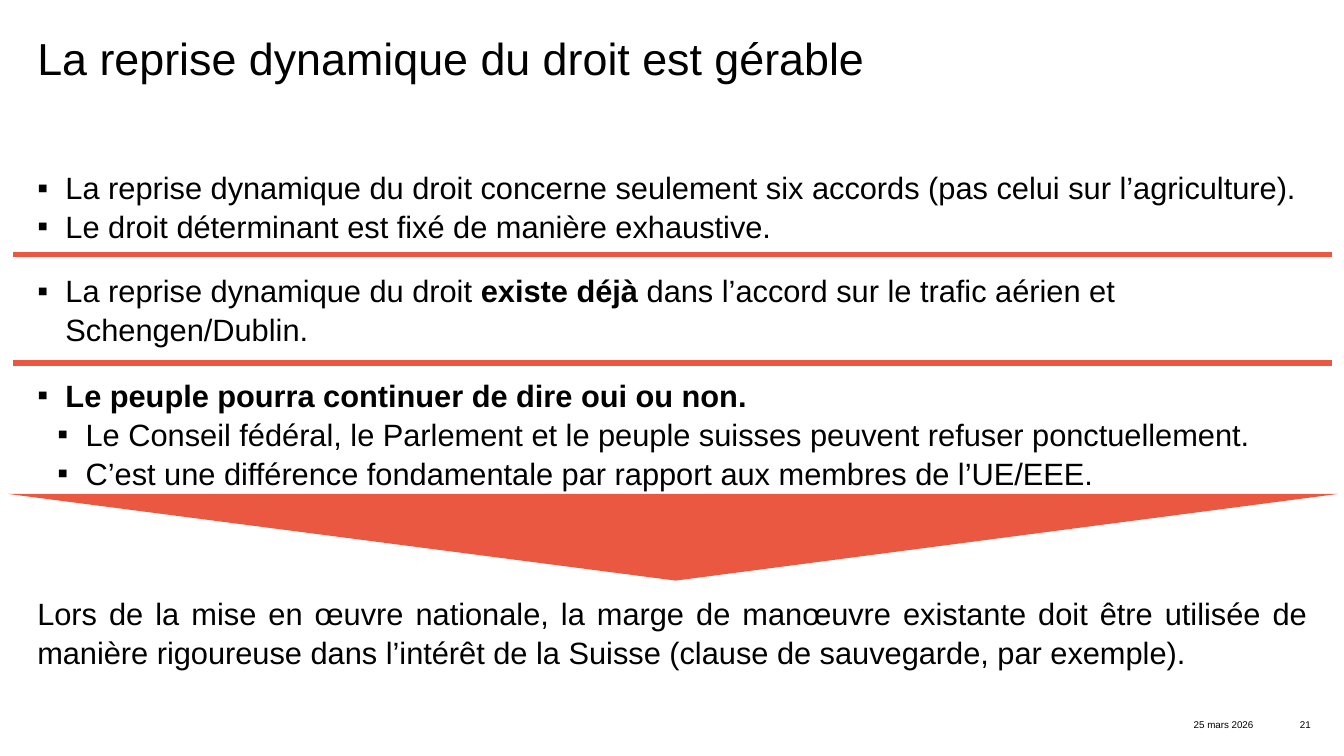
from dataclasses import dataclass

from lxml.etree import SubElement
from pptx import Presentation
from pptx.dml.color import RGBColor
from pptx.enum.shapes import MSO_SHAPE as Shape
from pptx.enum.text import MSO_ANCHOR as Anchor, PP_ALIGN as Align
from pptx.oxml.ns import qn
from pptx.util import Inches, Pt


@dataclass(frozen=True)
class Theme:
    font: str = "Arial"
    ink: RGBColor = RGBColor(0x00, 0x00, 0x00)
    accent: RGBColor = RGBColor(0xEA, 0x58, 0x41)
    title_size: float = 32
    body_size: float = 22
    footer_size: float = 7
    body_spacing: float = 1.05
    hang: float = 0.28
    level_step: float = 0.2


THEME = Theme()
LEFT, WIDTH = 0.37, 12.6

# Each paragraph is a level and its runs; a run is a text and its weight
SCOPE = [
    (0, [("La reprise dynamique du droit concerne seulement six accords "
          "(pas celui sur l’agriculture).", False)]),
    (0, [("Le droit déterminant est fixé de manière exhaustive.", False)]),
]
PRECEDENT = [
    (0, [("La reprise dynamique du droit ", False), ("existe déjà ", True),
         ("dans l’accord sur le trafic aérien et Schengen/Dublin.", False)]),
]
VOTE = [
    (0, [("Le peuple pourra continuer de dire oui ou non.", True)]),
    (1, [("Le Conseil fédéral, le Parlement et le peuple suisses peuvent "
          "refuser ponctuellement.", False)]),
    (1, [("C’est une différence fondamentale par rapport aux membres de "
          "l’UE/EEE.", False)]),
]
CONCLUSION = ("Lors de la mise en œuvre nationale, la marge de manœuvre existante "
              "doit être utilisée de manière rigoureuse dans l’intérêt de la Suisse "
              "(clause de sauvegarde, par exemple).")


def add_bullet(para, level):
    para.level = level
    props = para._p.get_or_add_pPr()
    props.set("marL", str(Inches(THEME.hang + level * THEME.level_step)))
    props.set("indent", str(-Inches(THEME.hang)))
    SubElement(props, qn("a:buFont")).set("typeface", THEME.font)
    SubElement(props, qn("a:buChar")).set("char", "▪")


def add_text(page, box, paragraphs, *, size=THEME.body_size, align=Align.LEFT,
             spacing=THEME.body_spacing, bullets=False):
    """Place text in a box; a plain string counts as one regular paragraph."""
    if isinstance(paragraphs, str):
        paragraphs = [(0, [(paragraphs, False)])]
    frame = page.shapes.add_textbox(*map(Inches, box)).text_frame
    frame.word_wrap = True
    frame.vertical_anchor = Anchor.TOP
    frame.margin_left = frame.margin_right = 0
    frame.margin_top = frame.margin_bottom = 0
    for index, (level, spans) in enumerate(paragraphs):
        para = frame.add_paragraph() if index else frame.paragraphs[0]
        para.alignment = align
        para.line_spacing = spacing
        if bullets:
            add_bullet(para, level)
        for text, bold in spans:
            span = para.add_run()
            span.text = text
            span.font.name = THEME.font
            span.font.size = Pt(size)
            span.font.bold = bold
            span.font.color.rgb = THEME.ink


def add_accent(page, kind, box):
    shape = page.shapes.add_shape(kind, *map(Inches, box))
    shape.shadow.inherit = False
    shape.fill.solid()
    shape.fill.fore_color.rgb = THEME.accent
    shape.line.fill.background()
    return shape


def add_arguments(page, left, width):
    # Dividers between the three groups
    for top in (2.4, 3.48):
        add_accent(page, Shape.MATH_MINUS, (left - 2.6, top, width + 5.2, 0.25))
    # Bulleted groups
    for top, height, group in ((1.66, 0.74, SCOPE), (2.68, 0.74, PRECEDENT),
                               (3.72, 1.11, VOTE)):
        add_text(page, (left, top, width, height), group, bullets=True)


def add_conclusion(page, left, top, width):
    arrow = add_accent(page, Shape.ISOSCELES_TRIANGLE,
                       (left - 0.29, top, width + 0.59, 0.86))
    arrow.rotation = 180
    arrow.adjustments[0] = 0.498
    add_text(page, (left, top + 0.98, width, 0.74), CONCLUSION, align=Align.JUSTIFY)


def add_footer(page, top):
    for text, left, width in (("25 mars 2026", 6.68, 5.75), ("21", 12.76, 0.24)):
        add_text(page, (left, top, width, 0.1), text, size=THEME.footer_size,
                 align=Align.RIGHT, spacing=0.9)


def main():
    deck = Presentation()
    deck.slide_width, deck.slide_height = Inches(13.33), Inches(7.5)
    page = deck.slides.add_slide(deck.slide_layouts[6])
    add_text(page, (LEFT, 0.39, WIDTH, 0.43), "La reprise dynamique du droit est gérable",
             size=THEME.title_size, spacing=0.84)
    add_arguments(page, LEFT, WIDTH)
    add_conclusion(page, LEFT, 4.9, WIDTH)
    add_footer(page, 7.14)
    deck.save("out.pptx")


if __name__ == "__main__":
    main()
